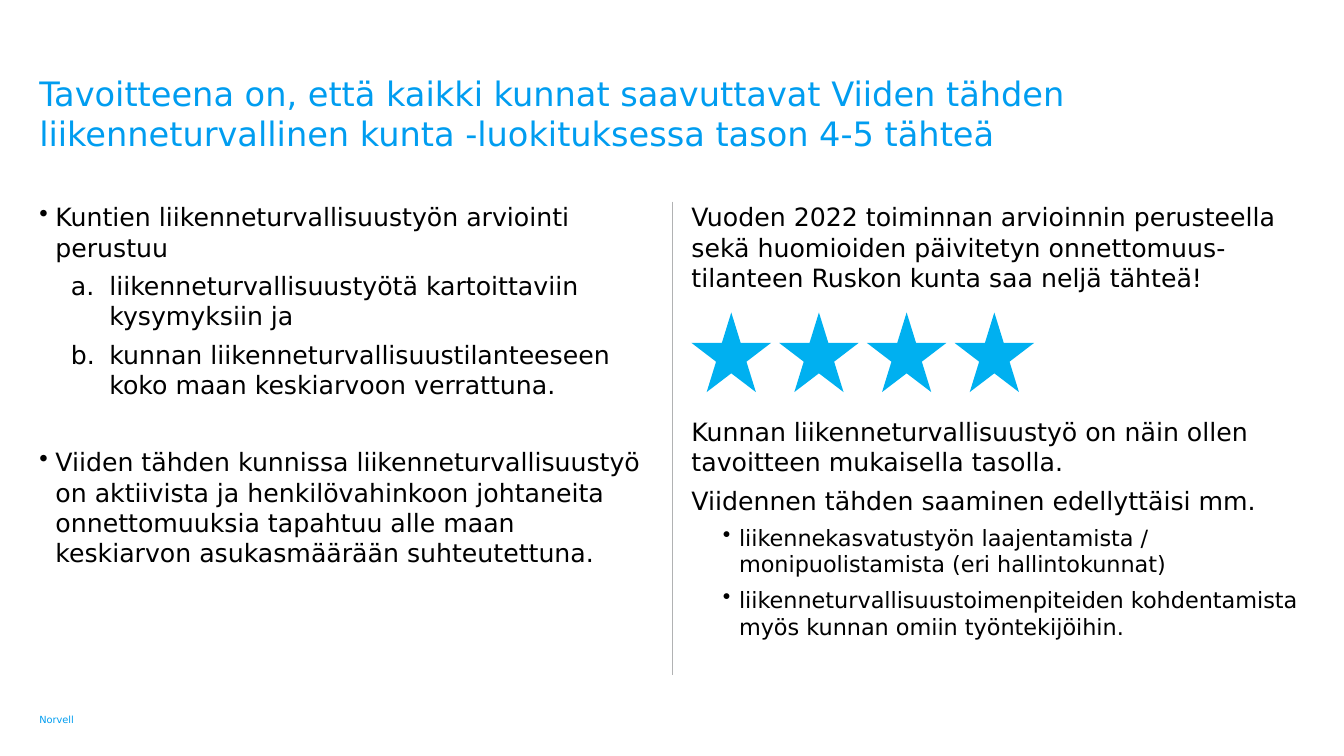
from lxml.etree import SubElement
from pptx import Presentation
from pptx.dml.color import RGBColor
from pptx.enum.shapes import MSO_CONNECTOR, MSO_SHAPE
from pptx.enum.text import MSO_ANCHOR
from pptx.oxml.ns import qn
from pptx.util import Pt

FONT = "DejaVu Sans"
BLUE = RGBColor(0x00, 0x9D, 0xF0)
STAR_BLUE = RGBColor(0x00, 0xB0, 0xF0)
GREY = RGBColor(0xB1, 0xB2, 0xB3)
BLACK = RGBColor(0x00, 0x00, 0x00)

LEFT, RIGHT = 28.1, 493.9
COLUMN_TOP, COLUMN_WIDTH, COLUMN_HEIGHT = 144, 437.8, 338.4

deck = Presentation()
deck.slide_width, deck.slide_height = Pt(960), Pt(540)
page = deck.slides.add_slide(deck.slide_layouts[6])


def add_text(left, top, width, height, paragraphs, color=BLACK, anchor=MSO_ANCHOR.TOP):
    """Each paragraph: text, size, space before, space after, indent, hanging, bullet."""
    box = page.shapes.add_textbox(Pt(left), Pt(top), Pt(width), Pt(height))
    frame = box.text_frame
    frame.word_wrap = True
    frame.vertical_anchor = anchor
    frame.margin_left = frame.margin_top = frame.margin_right = frame.margin_bottom = 0
    for index, (text, size, before, after, indent, hanging, bullet) in enumerate(paragraphs):
        para = frame.add_paragraph() if index else frame.paragraphs[0]
        para.text = text
        para.space_before, para.space_after = Pt(before), Pt(after)
        font = para.runs[0].font
        font.name, font.size, font.color.rgb = FONT, Pt(size), color
        if bullet:
            properties = para._p.get_or_add_pPr()
            properties.set("marL", str(Pt(indent)))
            properties.set("indent", str(-Pt(hanging)))
            tag, key, value = bullet
            SubElement(properties, qn(tag)).set(key, value)


DOT = ("a:buChar", "char", "•")
LETTER = ("a:buAutoNum", "type", "alphaLcPeriod")

# Title and footer
add_text(LEFT, 51.8, 825, 73.4, [
    ("Tavoitteena on, että kaikki kunnat saavuttavat Viiden tähden "
     "liikenneturvallinen kunta -luokituksessa tason 4-5 tähteä", 24, 0, 0, 0, 0, None),
], BLUE)
add_text(LEFT, 501.1, 61.2, 17.3, [("Norvell", 7, 0, 0, 0, 0, None)], BLUE, MSO_ANCHOR.BOTTOM)

# Divider between the columns
divider = page.shapes.add_connector(
    MSO_CONNECTOR.STRAIGHT, Pt(480), Pt(COLUMN_TOP), Pt(480), Pt(COLUMN_TOP + COLUMN_HEIGHT))
divider.line.color.rgb = GREY
divider.line.width = Pt(0.5)
SubElement(divider._element.spPr, qn("a:effectLst"))

# Left column: basis of the rating
add_text(LEFT, COLUMN_TOP, COLUMN_WIDTH, COLUMN_HEIGHT, [
    ("Kuntien liikenneturvallisuustyön arviointi perustuu", 18, 0, 6, 11.5, 11.5, DOT),
    ("liikenneturvallisuustyötä kartoittaviin kysymyksiin ja", 18, 0, 6, 50, 27.4, LETTER),
    ("kunnan liikenneturvallisuustilanteeseen koko maan keskiarvoon verrattuna.",
     18, 0, 6, 50, 27.4, LETTER),
    ("Viiden tähden kunnissa liikenneturvallisuustyö on aktiivista ja henkilövahinkoon "
     "johtaneita onnettomuuksia tapahtuu alle maan keskiarvon asukasmäärään suhteutettuna.",
     18, 27.5, 6, 11.5, 11.5, DOT),
])

# Right column: result, with room for the stars
add_text(RIGHT, COLUMN_TOP, COLUMN_WIDTH, COLUMN_HEIGHT, [
    ("Vuoden 2022 toiminnan arvioinnin perusteella sekä huomioiden päivitetyn "
     "onnettomuus-tilanteen Ruskon kunta saa neljä tähteä!", 18, 0, 6, 0, 0, None),
    ("Kunnan liikenneturvallisuustyö on näin ollen tavoitteen mukaisella tasolla.",
     18, 82.5, 6, 0, 0, None),
    ("Viidennen tähden saaminen edellyttäisi mm.", 18, 0, 6, 0, 0, None),
    ("liikennekasvatustyön laajentamista / monipuolistamista (eri hallintokunnat)",
     16, 0, 6, 34, 11.5, DOT),
    ("liikenneturvallisuustoimenpiteiden kohdentamista myös kunnan omiin työntekijöihin.",
     16, 0, 6, 34, 11.5, DOT),
])

# Four stars
for index in range(4):
    star = page.shapes.add_shape(
        MSO_SHAPE.STAR_5_POINT, Pt(RIGHT + 62.64 * index), Pt(223.2), Pt(56.9), Pt(56.9))
    star.shadow.inherit = False
    star.fill.solid()
    star.fill.fore_color.rgb = STAR_BLUE
    star.line.fill.background()

deck.save("out.pptx")
